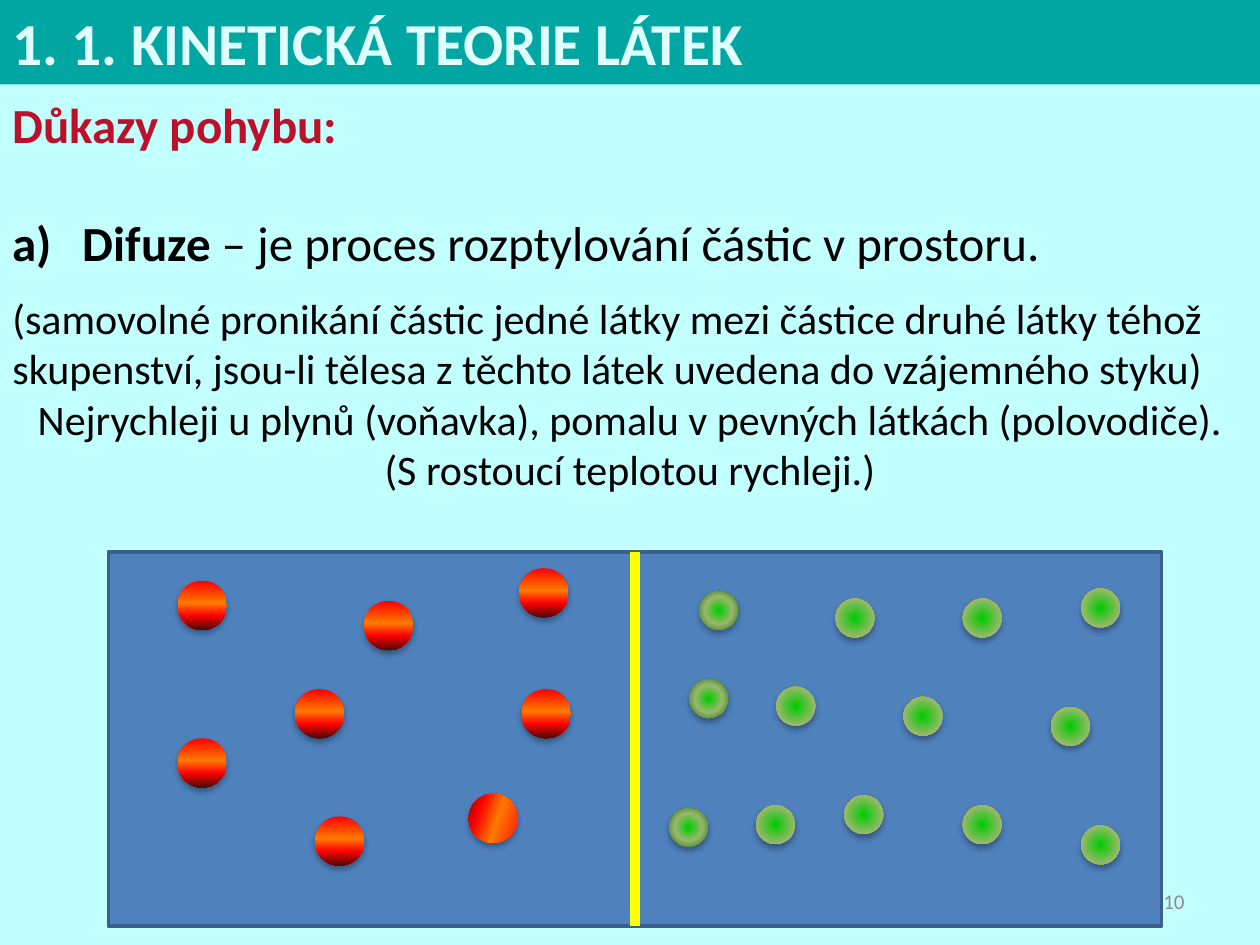
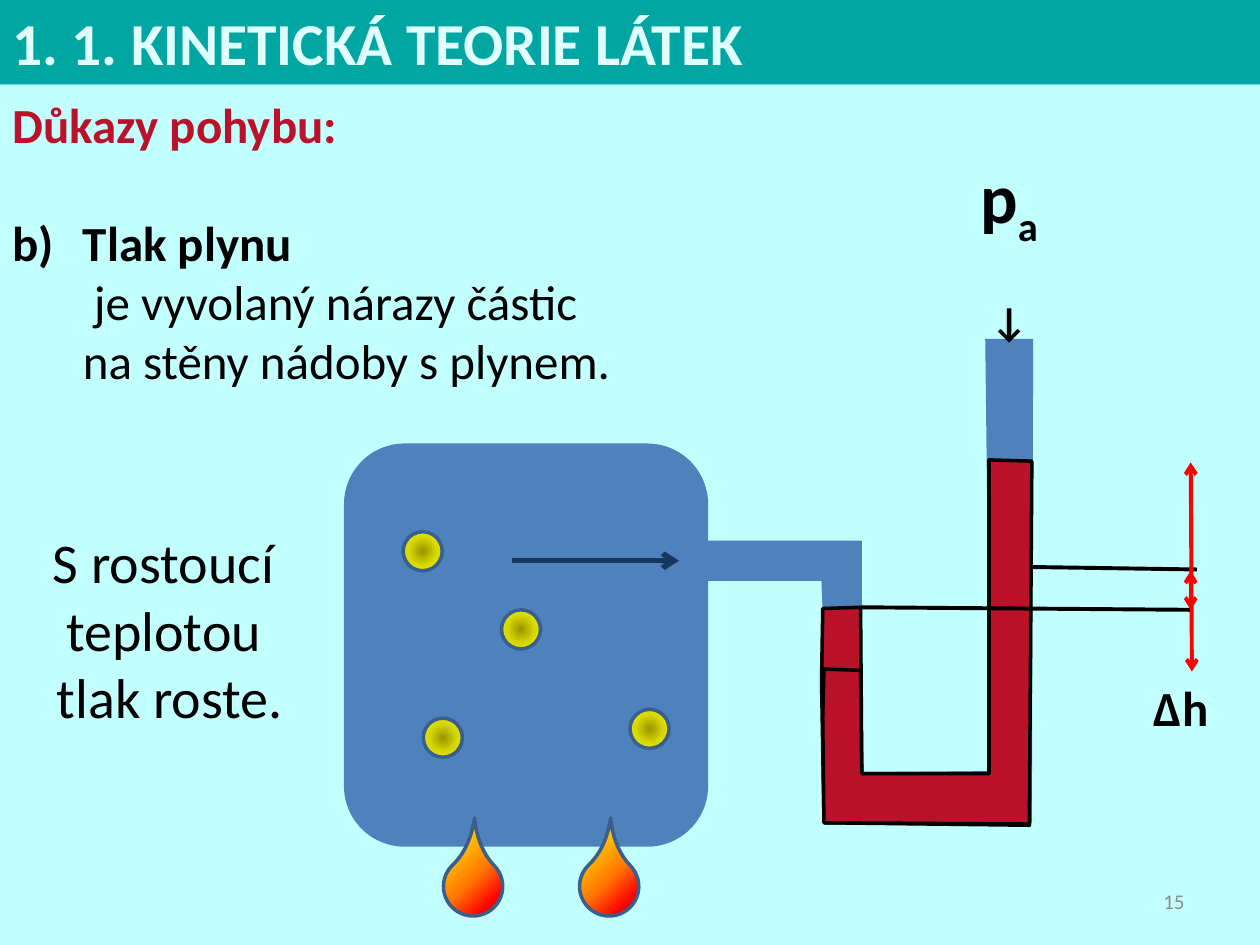
from pptx import Presentation
from pptx.dml.color import RGBColor
from pptx.enum.shapes import MSO_CONNECTOR, MSO_SHAPE
from pptx.enum.text import MSO_ANCHOR, PP_ALIGN
from pptx.oxml import parse_xml
from pptx.oxml.ns import nsdecls
from pptx.util import Inches, Pt
from lxml.etree import SubElement

INK = {
    "bg": "C2FFFF", "band": "00A6A2", "title": "E0FFFF", "red": "BA122A",
    "text": "000000", "gas": "4F81BD", "edge": "3A5F8C", "gray": "8C8C8C",
    "wall": "FFFF00", "mark": "FF0000", "navy": "17375E",
}
HOT = [(0, "FF0000"), (45, "FF7A00"), (70, "FF0300"), (100, "4D0808")]
GREEN = [(0, "00CC00"), (50, "9CB86E"), (100, "156B13")]
GOLD = [(0, "979700"), (50, "D7D700"), (100, "FFFF00")]
FLAME = [(0, "FFF200"), (45, "FF7A00"), (70, "FF0300"), (100, "4D0808")]
LINEAR = '<a:lin ang="5400000" scaled="0"/>'
ROUND = '<a:path path="circle"><a:fillToRect l="50000" t="50000" r="50000" b="50000"/></a:path>'
SHADE = (
    f'<a:effectLst {nsdecls("a")}><a:outerShdw blurRad="44450" dist="27940" dir="5400000">'
    '<a:srgbClr val="000000"><a:alpha val="32000"/></a:srgbClr></a:outerShdw></a:effectLst>'
)
LEFT, MID, RIGHT = PP_ALIGN.LEFT, PP_ALIGN.CENTER, PP_ALIGN.RIGHT


def paint(shape, fill, edge=None, way=LINEAR):
    shape.shadow.inherit = False
    if edge:
        shape.line.color.rgb = RGBColor.from_string(INK[edge])
        shape.line.width = Pt(2)
    else:
        shape.line.fill.background()
    if isinstance(fill, str):
        shape.fill.solid()
        shape.fill.fore_color.rgb = RGBColor.from_string(INK[fill])
        return
    stops = "".join(
        f'<a:gs pos="{pos * 1000}"><a:srgbClr val="{tint}"/></a:gs>' for pos, tint in fill
    )
    shape.fill.background()
    old = shape.fill._xPr.find("{*}noFill")
    old.getparent().replace(old, parse_xml(
        f'<a:gradFill {nsdecls("a")} rotWithShape="1"><a:gsLst>{stops}</a:gsLst>{way}</a:gradFill>'
    ))


def write(frame, rows, wrap=True):
    frame.word_wrap = wrap
    for i, (side, gap, num, runs) in enumerate(rows):
        para = frame.paragraphs[0] if i == 0 else frame.add_paragraph()
        para.alignment = side
        if gap:
            para.space_before = Pt(gap)
        if num:
            props = para._p.get_or_add_pPr()
            props.set("marL", str(Inches(0.56)))
            props.set("indent", str(-Inches(0.56)))
            props.append(parse_xml(
                f'<a:buAutoNum {nsdecls("a")} type="alphaLcParenR" startAt="{num}"/>'
            ))
        for text, size, tint, bold in runs:
            for j, part in enumerate(text.split("\n")):
                if j:
                    para.add_line_break()
                run = para.add_run()
                run.text = part
                run.font.name = "Calibri"
                run.font.size = Pt(size)
                run.font.bold = bold
                run.font.color.rgb = RGBColor.from_string(INK[tint])


deck = Presentation()
deck.slide_width, deck.slide_height = Inches(10), Inches(7.5)

proofs = [
    ("10", 3.3, [
        (LEFT, 34, 1, [("Difuze", 28, "text", True),
                       (" – je proces rozptylování částic v prostoru.", 28, "text", False)]),
        (LEFT, 12, 0, [("(samovolné pronikání částic jedné látky mezi částice druhé látky téhož "
                        "skupenství, jsou-li tělesa z těchto látek uvedena do vzájemného styku)",
                        24, "text", False)]),
        (MID, 0, 0, [("Nejrychleji u plynů (voňavka), pomalu v pevných látkách (polovodiče).",
                      24, "text", False)]),
        (MID, 0, 0, [("(S rostoucí teplotou rychleji.)", 24, "text", False)]),
    ]),
    ("15", 2.93, [
        (LEFT, 34, 2, [("Tlak plynu", 28, "text", True),
                       ("\n je vyvolaný nárazy částic \nna stěny nádoby s plynem.",
                        28, "text", False)]),
    ]),
]
slides = []
for page, tall, rows in proofs:
    slide = deck.slides.add_slide(deck.slide_layouts[6])
    slides.append(slide)
    slide.background.fill.solid()
    slide.background.fill.fore_color.rgb = RGBColor.from_string(INK["bg"])
    band = slide.shapes.add_shape(MSO_SHAPE.RECTANGLE, 0, 0, Inches(10), Inches(0.67))
    paint(band, "band")
    band.text_frame.vertical_anchor = MSO_ANCHOR.TOP
    write(band.text_frame, [(LEFT, 0, 0, [("1. 1. KINETICKÁ TEORIE LÁTEK", 34, "title", True)])])
    body = slide.shapes.add_textbox(0, Inches(0.7), Inches(10), Inches(tall))
    write(body.text_frame, [(LEFT, 0, 0, [("Důkazy pohybu:", 28, "red", True)])] + rows)

first, second = slides

tank = first.shapes.add_shape(
    MSO_SHAPE.RECTANGLE, Inches(0.86), Inches(4.38), Inches(8.36), Inches(2.97))
paint(tank, "gas", "edge")

tube = [(5.62, 4.61), (6.52, 4.61), (6.59, 6.52), (8.19, 6.53), (8.2, 2.69), (7.82, 2.69),
        (7.86, 6.12), (6.84, 6.13), (6.84, 4.29), (5.6, 4.29)]
low = [(6.83, 4.82), (6.53, 4.83), (6.52, 5.4), (6.54, 6.53), (8.17, 6.55), (8.17, 4.52),
       (7.85, 4.49), (7.87, 6.14), (6.84, 6.14)]
high = [(6.83, 5.32), (6.54, 5.31), (6.53, 5.7), (6.54, 6.53), (8.17, 6.54), (8.19, 3.66),
        (7.85, 3.65), (7.85, 6.14), (6.84, 6.14)]
for spots, fill, edge in [(tube, "gas", None), (low, "red", "text"), (high, "red", "text")]:
    pen = second.shapes.build_freeform(Inches(spots[0][0]), Inches(spots[0][1]))
    pen.add_line_segments([(Inches(x), Inches(y)) for x, y in spots[1:]], close=True)
    paint(pen.convert_to_shape(), fill, edge)

flask = second.shapes.add_shape(
    MSO_SHAPE.ROUNDED_RECTANGLE, Inches(2.73), Inches(3.52), Inches(2.89), Inches(3.2))
paint(flask, "gas")

reds = [(4.12, 4.51, 0), (2.89, 4.77, 0), (3.72, 6.3, 108.6), (1.41, 5.86, 0),
        (1.41, 4.61, 0), (4.14, 5.47, 0), (2.34, 5.47, 0), (2.5, 6.48, 0)]
greens = [(5.55, 4.69, 0), (5.31, 6.41, 0), (5.47, 5.39, 0)] + [
    (x, y, 52.5) for x, y in [
        (7.64, 4.75), (6.63, 4.75), (6.7, 6.31), (8.58, 6.55), (8.58, 4.67), (8.34, 5.61),
        (7.64, 6.39), (7.17, 5.53), (6, 6.39), (6.16, 5.45)]]
golds = [(5, 5.63, 0), (3.36, 5.7, 0), (3.98, 4.84, 0), (3.2, 4.22, 0)]
drops = [(4.6, 6.8, 316.2), (3.52, 6.8, 316.2)]
for slide, kind, spots, size, fill, edge, way in [
    (first, MSO_SHAPE.OVAL, reds, 0.39, HOT, None, LINEAR),
    (first, MSO_SHAPE.OVAL, greens, 0.31, GREEN, None, ROUND),
    (second, MSO_SHAPE.OVAL, golds, 0.31, GOLD, "edge", ROUND),
    (second, MSO_SHAPE.TEAR, drops, 0.47, FLAME, "edge", LINEAR),
]:
    for x, y, turn in spots:
        ball = slide.shapes.add_shape(kind, Inches(x), Inches(y), Inches(size), Inches(size))
        ball.rotation = turn
        paint(ball, fill, edge, way)
        if kind == MSO_SHAPE.TEAR:
            ball.adjustments[0] = 1.629
        if slide is first:
            glow = ball._element.spPr.find("{*}effectLst")
            glow.getparent().replace(glow, parse_xml(SHADE))

links = []
for slide, x1, y1, x2, y2, tint, thick, ends in [
    (first, 5.04, 4.38, 5.04, 7.35, "wall", 6, []),
    (second, 8.19, 4.5, 9.5, 4.52, "text", 2.25, []),
    (second, 9.45, 4.53, 9.45, 4.84, "mark", 2.25, ["headEnd", "tailEnd"]),
    (second, 4.06, 4.45, 5.39, 4.45, "navy", 3, ["tailEnd"]),
    (second, 6.83, 4.82, 9.45, 4.84, "text", 2.25, []),
    (second, 9.45, 3.67, 9.46, 5.33, "mark", 2.25, ["headEnd", "tailEnd"]),
]:
    link = slide.shapes.add_connector(
        MSO_CONNECTOR.STRAIGHT, Inches(x1), Inches(y1), Inches(x2), Inches(y2))
    link.line.color.rgb = RGBColor.from_string(INK[tint])
    link.line.width = Pt(thick)
    stroke = link.line._get_or_add_ln()
    for end in ends:
        SubElement(stroke, stroke.tag[:-2] + end, type="arrow")
    link._element.spPr.append(parse_xml(f'<a:effectLst {nsdecls("a")}/>'))
    links.append(link)
links[0].begin_connect(tank, 0)
links[0].end_connect(tank, 2)

heat = second.shapes.add_textbox(Inches(0.31), Inches(4.14), Inches(2.08), Inches(1.72))
write(heat.text_frame, [
    (MID, 0, 0, [(line, 32, "text", False)])
    for line in ["S rostoucí ", "teplotou ", "tlak roste."]], wrap=False)

air = second.shapes.add_textbox(Inches(7.66), Inches(1.17), Inches(0.7), Inches(1.45))
write(air.text_frame, [
    (MID, 0, 0, [("p", 40, "text", True), ("a", 40, "text", True)]),
    (MID, 0, 0, [("↓", 40, "text", True)])])
for para in air.text_frame.paragraphs:
    para.runs[-1].font._element.set("baseline", "-25000")

rise = second.shapes.add_textbox(Inches(9.06), Inches(5.33), Inches(0.7), Inches(0.57))
write(rise.text_frame, [(LEFT, 0, 0, [("∆h", 28, "text", True)])])

for slide, (page, tall, rows) in zip(slides, proofs):
    foot = slide.shapes.add_textbox(Inches(7.17), Inches(6.95), Inches(2.33), Inches(0.4))
    foot.text_frame.vertical_anchor = MSO_ANCHOR.MIDDLE
    write(foot.text_frame, [(RIGHT, 0, 0, [(page, 12, "gray", False)])])

deck.save("out.pptx")
